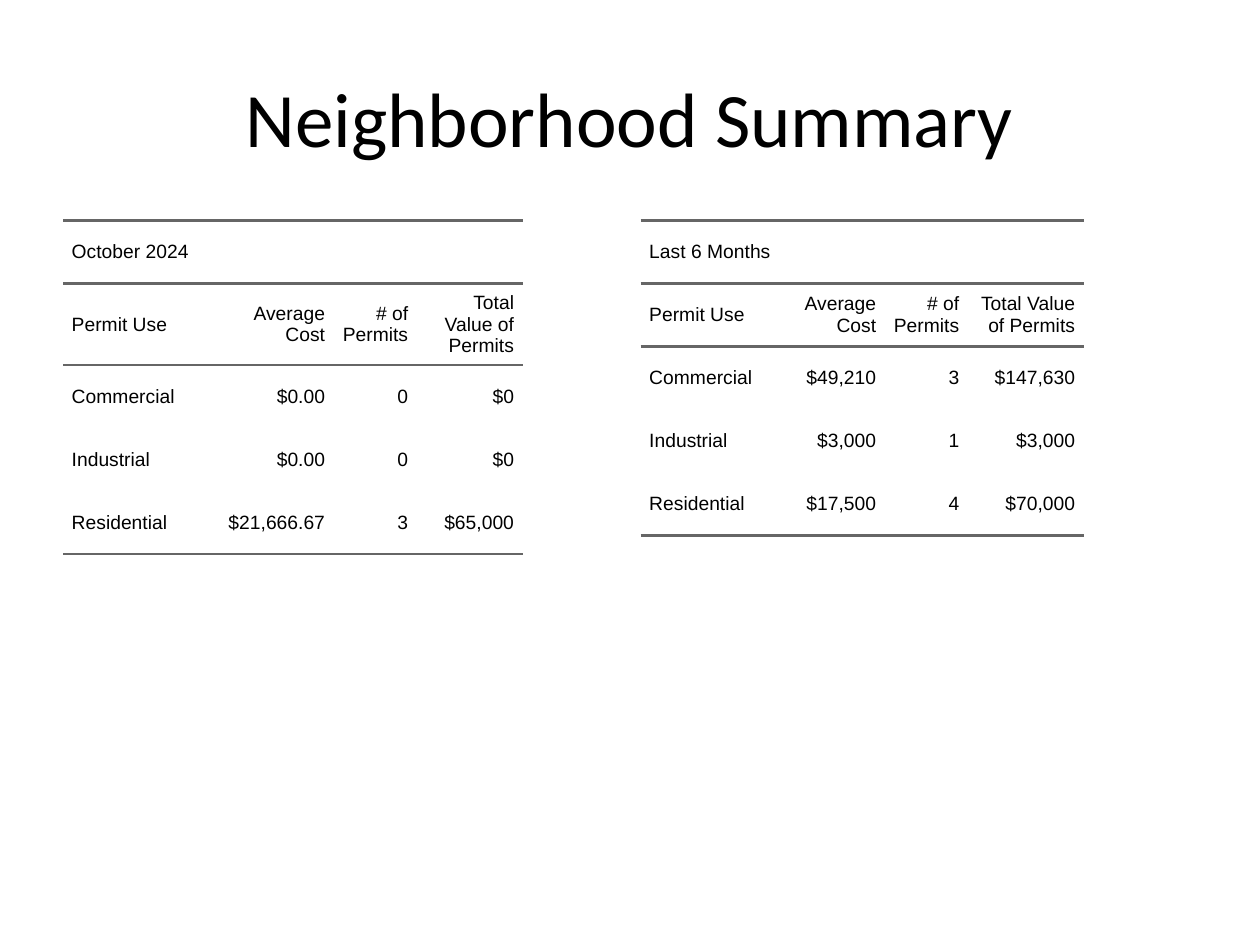
"""Build the Neighborhood Summary slide with two permit tables."""
from lxml import etree
from pptx import Presentation
from pptx.dml.color import RGBColor
from pptx.enum.text import MSO_ANCHOR, PP_ALIGN
from pptx.oxml import parse_xml
from pptx.oxml.ns import nsdecls, qn
from pptx.util import Pt

MID = MSO_ANCHOR.MIDDLE
LEFT, MIDDLE, RIGHT = PP_ALIGN.LEFT, PP_ALIGN.CENTER, PP_ALIGN.RIGHT
BLACK, GREY = "000000", "666666"
PLAIN = "{2D5ABB26-0587-4C30-8999-92F81FD0307C}"
TITLE = "Neighborhood Summary"
HEAD = ("Permit Use", "Average Cost", "# of Permits", "Total Value of Permits")
TABLES = [
    {"left": 36, "cols": (79.2, 75.6, 47.5, 60.5), "rows": [
        ("October 2024",), HEAD,
        ("Commercial", "$0.00", "0", "$0"),
        ("Industrial", "$0.00", "0", "$0"),
        ("Residential", "$21,666.67", "3", "$65,000")]},
    {"left": 366, "cols": (79.2, 60.5, 47.5, 66.2), "rows": [
        ("Last 6 Months",), HEAD,
        ("Commercial", "$49,210", "3", "$147,630"),
        ("Industrial", "$3,000", "1", "$3,000"),
        ("Residential", "$17,500", "4", "$70,000")]},
]
TOP, WIDE, HIGH, ROW, PAD = 126, 318, 356.4, 36, 5


def color(code):
    return RGBColor.from_string(code)


def write(frame, text, font, size, align):
    para = frame.paragraphs[0]
    para.alignment = align
    run = para.add_run()
    run.text = text
    run.font.name, run.font.size = font, Pt(size)
    run.font.color.rgb = color(BLACK)
    return para


def rule(cell, sides):
    props = cell._tc.get_or_add_tcPr()
    for spot, side in enumerate(sides):
        line = parse_xml(f'<a:ln{side} {nsdecls("a")} w="{Pt(1.5)}"/>')
        fill = etree.SubElement(line, qn("a:solidFill"))
        etree.SubElement(fill, qn("a:srgbClr")).set("val", GREY)
        props.insert(spot, line)


def fill_cell(cell, text, align):
    cell.vertical_anchor = MID
    cell.margin_left = 0
    cell.margin_top = cell.margin_right = cell.margin_bottom = Pt(PAD)
    para = write(cell.text_frame, text, "Arial", 11, align)
    para.space_before = para.space_after = Pt(PAD)
    para._p.get_or_add_pPr().set("marL", str(Pt(PAD)))


def draw_table(slide, left, cols, rows):
    frame = slide.shapes.add_table(len(rows), len(cols), Pt(left), Pt(TOP),
                                   Pt(WIDE), Pt(HIGH))
    table = frame.table
    table.first_row = table.horz_banding = False
    table._tbl.tblPr[0].text = PLAIN
    for col, width in zip(table.columns, cols):
        col.width = Pt(width)
    for row in table.rows:
        row.height = Pt(ROW)
    frame.width, frame.height = Pt(WIDE), Pt(HIGH)
    table.cell(0, 0).merge(table.cell(0, len(cols) - 1))
    last = len(rows) - 1
    for r, row in enumerate(rows):
        sides = "TB" if r < 2 else "B" if r == last else ""
        for c in range(len(cols)):
            cell = table.cell(r, c)
            cell.fill.background()
            rule(cell, sides)
            if c < len(row):
                fill_cell(cell, row[c], RIGHT if c else LEFT)


def main():
    deck = Presentation()
    deck.slide_width, deck.slide_height = Pt(720), Pt(540)
    slide = deck.slides.add_slide(deck.slide_layouts[6])
    for item in TABLES:
        draw_table(slide, **item)
    box = slide.shapes.add_textbox(Pt(36), Pt(21.6), Pt(648), Pt(90))
    box.text_frame.word_wrap = True
    box.text_frame.vertical_anchor = MID
    write(box.text_frame, TITLE, "Calibri", 44, MIDDLE)
    deck.save("out.pptx")


if __name__ == "__main__":
    main()
